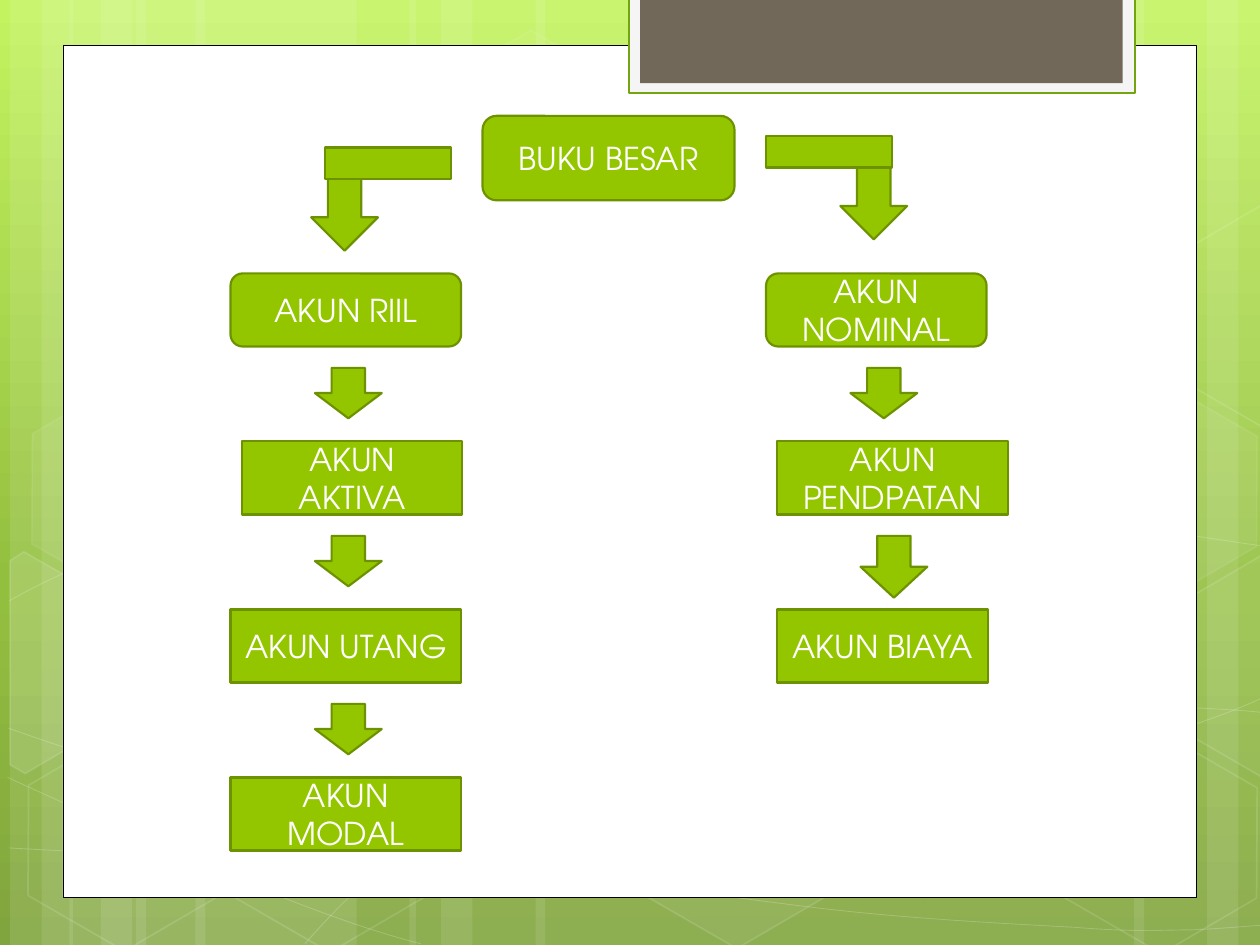
from copy import deepcopy

from lxml import etree
from pptx import Presentation
from pptx.dml.color import RGBColor
from pptx.enum.shapes import MSO_SHAPE
from pptx.enum.text import MSO_ANCHOR, PP_ALIGN
from pptx.oxml.ns import qn
from pptx.util import Inches, Pt

RECTANGLE = MSO_SHAPE.RECTANGLE
ROUNDED = MSO_SHAPE.ROUNDED_RECTANGLE
HEXAGON = MSO_SHAPE.HEXAGON
DOWN_ARROW = MSO_SHAPE.DOWN_ARROW
CENTER = PP_ALIGN.CENTER
MIDDLE = MSO_ANCHOR.MIDDLE

COLORS = {
    "white": "FFFFFF", "black": "000000", "green": "94C600",
    "dark_green": "6D9200", "tab_line": "74A510", "tab": "F5F5F5",
    "brown": "71685A",
}
GRADIENT = [("C3F35F", 0), ("93BF3F", 0.62), ("81A53E", 1)]
FONT = "TeX Gyre Adventor"
ARROW_WIDTH, ARROW_HEIGHT = 0.53, 0.4
BOX_HEIGHT, ROW_PITCH = 0.58, 4 / 3

# Background bands: left and width
BANDS = [
    (1.08, 1.75), (0.08, 0.5), (0.33, 0.83), (1.55, 1.75), (0.55, 0.5),
    (0.8, 0.83), (7.33, 1.75), (9.58, 0.5), (9, 0.83), (4.25, 3.08),
    (3.25, 0.5), (3.5, 0.83),
]
# Background waves: a start point, then cubic segments of three points
WAVES = [
    [(0.07, 6.73), (0.61, 6.76), (1.15, 6.79), (1.9, 6.78), (2.65, 6.77),
     (3.58, 6.75), (4.58, 6.65), (5.58, 6.55), (7, 6.36), (7.92, 6.17),
     (8.83, 5.98), (9.77, 5.68), (10.07, 5.51)],
    [(0.07, 4.77), (0.36, 4.61), (0.65, 4.46), (1.21, 4.31), (1.78, 4.16),
     (2.59, 3.94), (3.47, 3.87), (4.36, 3.8), (5.44, 3.79), (6.54, 3.87),
     (7.64, 3.95), (9.47, 4.26), (10.07, 4.34)],
    [(0.06, 6.17), (1.27, 6.72), (2.47, 7.27), (3.34, 7.49)],
    [(0.07, 5.78), (0.38, 5.89), (0.7, 6), (1.28, 6.16), (1.86, 6.31),
     (2.73, 6.56), (3.57, 6.73), (4.4, 6.9), (5.45, 7.08), (6.28, 7.18),
     (7.11, 7.29), (8, 7.33), (8.53, 7.36), (9.05, 7.4), (9.19, 7.38),
     (9.45, 7.38), (9.71, 7.37), (9.89, 7.35), (10.07, 7.34)],
    [(2.42, 7.49), (2.6, 7.29), (2.78, 7.09), (3.02, 6.91), (3.26, 6.73),
     (3.6, 6.53), (3.88, 6.39), (4.16, 6.25), (4.33, 6.19), (4.7, 6.09),
     (5.06, 5.99), (5.73, 5.85), (6.08, 5.78), (6.44, 5.71), (6.49, 5.71),
     (6.8, 5.69), (7.11, 5.66), (7.6, 5.63), (7.94, 5.62), (8.29, 5.61),
     (8.86, 5.62), (8.86, 5.62), (9.08, 5.62), (9.31, 5.62), (9.53, 5.62),
     (9.71, 5.63), (9.88, 5.64), (9.97, 5.65), (10.06, 5.66), (10.03, 5.65),
     (10.06, 5.66)],
]
# Hexagons: left, top, fill opacity, line opacity
HEXAGONS = [
    (3.34, 0.36, 4, 8), (4.97, 5.89, 6, 12), (0.11, 5.91, None, 12),
    (0.14, 3.12, 7, 8), (1.74, 5.92, None, 12), (8.34, 5.93, None, 12),
    (8.34, 3.14, 7, 8),
]
# Hexagons cut by the slide edge: corners, fill opacity
CUT_HEXAGONS = [
    ([(0.08, 4.45), (0.19, 4.38), (0.96, 4.82), (0.95, 5.7), (0.2, 6.14),
      (0.08, 6.07)], 10),
    ([(9.26, 4.85), (10.01, 4.41), (10.09, 4.46), (10.09, 6.13),
      (10.02, 6.17), (9.26, 5.73)], 4),
    ([(9.26, 2.07), (10.01, 1.63), (10.1, 1.68), (10.09, 3.35),
      (10.02, 3.39), (9.26, 2.95)], None),
]


def set_color(fill, color, opacity):
    fill.solid()
    fill.fore_color.rgb = RGBColor.from_string(COLORS[color])
    if opacity < 100:
        element = fill._xPr.find(qn("a:solidFill"))[0]
        etree.SubElement(element, qn("a:alpha"), val=str(opacity * 1000))


def style(shape, fill=None, opacity=100, line=None, weight=1.25, line_opacity=100):
    shape.shadow.inherit = False
    if fill and opacity:
        set_color(shape.fill, fill, opacity)
    else:
        shape.fill.background()
    if line:
        set_color(shape.line.fill, line, line_opacity)
        shape.line.width = Pt(weight)
    else:
        shape.line.fill.background()


def add_box(slide, kind, left, top, width, height, **look):
    shape = slide.shapes.add_shape(
        kind, Inches(left), Inches(top), Inches(width), Inches(height))
    style(shape, **look)
    return shape


def add_outline(slide, points, close, **look):
    points = [(Inches(x), Inches(y)) for x, y in points]
    builder = slide.shapes.build_freeform(*points[0])
    builder.add_line_segments(points[1:], close=close)
    shape = builder.convert_to_shape()
    style(shape, **look)
    return shape


def bend(shape):
    """Turn each three line segments of a freeform into one cubic curve."""
    outline = next(shape.element.iter(qn("a:path")))
    lines = outline.findall(qn("a:lnTo"))
    for index in range(0, len(lines), 3):
        curve = etree.SubElement(outline, qn("a:cubicBezTo"))
        for line in lines[index:index + 3]:
            curve.append(line[0])
            outline.remove(line)


def write_text(shape, text, size=18, color="white", font=FONT):
    frame = shape.text_frame
    frame.word_wrap = True
    frame.vertical_anchor = MIDDLE
    paragraph = frame.paragraphs[0]
    paragraph.alignment = CENTER
    run = paragraph.add_run()
    run.text = text
    run.font.size = Pt(size)
    run.font.name = font
    run.font.color.rgb = RGBColor.from_string(COLORS[color])


def paint_gradient(slide):
    fill = slide.background.fill
    fill.gradient()
    fill.gradient_angle = 270
    stops = next(slide.element.iter(qn("a:gsLst")))
    stops.append(deepcopy(stops[-1]))
    for stop, (color, position) in zip(fill.gradient_stops, GRADIENT):
        stop.color.rgb = RGBColor.from_string(color)
        stop.position = position


def add_backdrop(slide, height):
    paint_gradient(slide)
    for left, width in BANDS:
        add_box(slide, RECTANGLE, left, 0, width, height, fill="white", opacity=10)
    for wave in WAVES:
        bend(add_outline(slide, wave, False,
                         line="white", weight=0.5, line_opacity=20))
    for left, top, opacity, line_opacity in HEXAGONS:
        hexagon = add_box(slide, HEXAGON, left, top, 1.75, 1.52, fill="white",
                          opacity=opacity, line="white", weight=1,
                          line_opacity=line_opacity)
        hexagon.adjustments[0] = 0.285
        hexagon.rotation = 30
    for corners, opacity in CUT_HEXAGONS:
        add_outline(slide, corners, True, fill="white", opacity=opacity,
                    line="white", weight=1, line_opacity=12)


def add_panel(slide, left, top, width, height):
    """Add the white panel and the tab that hangs over its top edge."""
    add_box(slide, RECTANGLE, left, top, width, height,
            fill="white", line="black", weight=0.5)
    tab_left, tab_top = left + 4.49, -0.02
    add_box(slide, RECTANGLE, tab_left, tab_top, 4.02, 0.76,
            fill="tab", line="tab_line")
    add_box(slide, RECTANGLE, tab_left + 0.09, tab_top, 3.83, 0.68, fill="brown")


def add_node(slide, kind, left, top, width, height, text=None):
    shape = add_box(slide, kind, left, top, width, height,
                    fill="green", line="dark_green")
    if text:
        write_text(shape, text)


def add_elbow(slide, left, top, arrow_left):
    """Add a horizontal bar with an arrow going down from it."""
    add_node(slide, DOWN_ARROW, arrow_left, top + 0.25, ARROW_WIDTH, 0.57)
    add_node(slide, RECTANGLE, left, top, 1, 0.25)


def add_account_column(slide, left, top, accounts, arrows):
    """Stack accounts (text, offset, width) with arrows (offset, height) between."""
    for row, (text, offset, width) in enumerate(accounts):
        kind = RECTANGLE if row else ROUNDED
        add_node(slide, kind, left + offset, top + row * ROW_PITCH,
                 width, BOX_HEIGHT, text)
    for row, (offset, height) in enumerate(arrows):
        add_node(slide, DOWN_ARROW, left + offset, top + row * ROW_PITCH + 0.75,
                 ARROW_WIDTH, height)


def main():
    presentation = Presentation()
    presentation.slide_width = Inches(10)
    presentation.slide_height = Inches(7.5)
    slide = presentation.slides.add_slide(presentation.slide_layouts[6])
    add_backdrop(slide, 7.5)
    add_panel(slide, 0.5, 0.36, 9, 6.76)
    add_node(slide, ROUNDED, 3.83, 0.92, 2, 0.67, "BUKU BESAR")
    add_elbow(slide, 2.58, 1.17, arrow_left=2.47)
    add_elbow(slide, 6.08, 1.08, arrow_left=6.67)
    add_account_column(
        slide, 1.83, 2.17,
        [("AKUN RIIL", 0, 1.83), ("AKUN AKTIVA", 0.09, 1.75),
         ("AKUN UTANG", 0, 1.83), ("AKUN MODAL", 0, 1.83)],
        [(0.67, ARROW_HEIGHT)] * 3)
    add_account_column(
        slide, 6.08, 2.17,
        [("AKUN NOMINAL", 0, 1.75), ("AKUN PENDPATAN", 0.09, 1.83),
         ("AKUN BIAYA", 0.09, 1.67)],
        [(0.67, ARROW_HEIGHT), (0.75, 0.49)])
    presentation.save("out.pptx")


if __name__ == "__main__":
    main()
